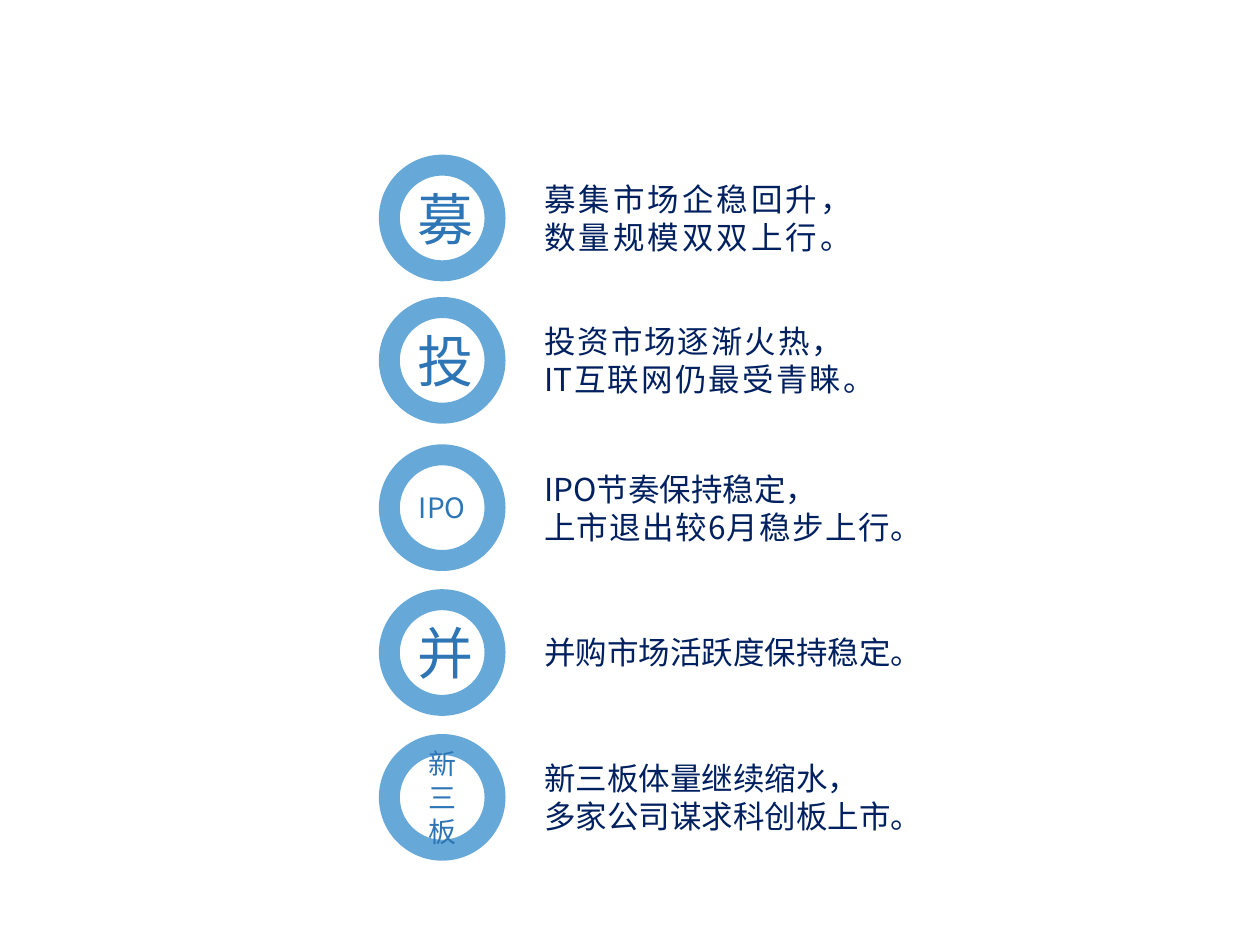
from dataclasses import dataclass

from lxml.etree import SubElement
from pptx import Presentation
from pptx.dml.color import RGBColor
from pptx.enum.lang import MSO_LANGUAGE_ID
from pptx.enum.shapes import MSO_SHAPE
from pptx.enum.text import MSO_ANCHOR, MSO_AUTO_SIZE, PP_ALIGN
from pptx.oxml.ns import qn
from pptx.slide import Slide
from pptx.text.text import TextFrame
from pptx.util import Cm, Pt

CIRCLE_LEFT = 7.85
CIRCLE_SIZE = 2.13
TEXT_LEFT = 10.72
LINE_HEIGHT = 0.76
TEXT_PADDING = 0.26
RING_OPACITY = 60

LABEL_FORMAT = {"name": "Noto Sans CJK JP", "language_id": MSO_LANGUAGE_ID.SIMPLIFIED_CHINESE}
SUMMARY_FORMAT = {
    "name": "Noto Sans CJK SC",
    "size": Pt(18),
    "language_id": MSO_LANGUAGE_ID.SIMPLIFIED_CHINESE,
}


@dataclass
class Topic:
    label: str
    label_size: int
    top: float
    paragraphs: list[str]
    text_width: float
    line_count: int = 2


TOPICS = [
    Topic("募", 32, 3.33, ["募集市场企稳回升，数量规模双双上行。"], 6.07),
    Topic("投", 32, 6.2, ["投资市场逐渐火热，IT互联网仍最受青睐。"], 6.53),
    Topic("IPO", 16, 9.17, ["IPO节奏保持稳定，", "上市退出较6月稳步上行。"], 7.49),
    Topic("并", 32, 12.09, ["并购市场活跃度保持稳定。"], 8.64, 1),
    Topic("新三板", 16, 15.01, ["新三板体量继续缩水，", "多家公司谋求科创板上市。"], 7.49),
]


def color(value: str) -> RGBColor:
    return RGBColor.from_string(value)


def write_text(
    frame: TextFrame, texts: list[str], alignment: PP_ALIGN, formats: dict, font_color: str
) -> None:
    for index, text in enumerate(texts):
        paragraph = frame.paragraphs[0] if index == 0 else frame.add_paragraph()
        paragraph.alignment = alignment
        run = paragraph.add_run()
        run.text = text
        for attribute, value in formats.items():
            setattr(run.font, attribute, value)
        run.font.color.rgb = color(font_color)
        east_asian = SubElement(run.font._element, qn("a:ea"))
        east_asian.set("typeface", formats["name"])
        latin = run.font._element.find(qn("a:latin"))
        latin.addnext(east_asian)


def draw_circle(slide: Slide, topic: Topic) -> None:
    circle = slide.shapes.add_shape(
        MSO_SHAPE.OVAL, Cm(CIRCLE_LEFT), Cm(topic.top), Cm(CIRCLE_SIZE), Cm(CIRCLE_SIZE)
    )
    circle.shadow.inherit = False
    circle.fill.background()
    circle.line.width = Pt(12)
    circle.line.color.rgb = color("0070C0")
    ring_color = circle.line._ln.find(f".//{qn('a:srgbClr')}")
    SubElement(ring_color, qn("a:alpha")).set("val", str(RING_OPACITY * 1000))
    frame = circle.text_frame
    frame.word_wrap = True
    frame.vertical_anchor = MSO_ANCHOR.MIDDLE
    formats = LABEL_FORMAT | {"size": Pt(topic.label_size)}
    write_text(frame, [topic.label], PP_ALIGN.CENTER, formats, "2E75B6")


def draw_summary(slide: Slide, topic: Topic) -> None:
    height = topic.line_count * LINE_HEIGHT + TEXT_PADDING
    top = topic.top + (CIRCLE_SIZE - height) / 2
    box = slide.shapes.add_textbox(Cm(TEXT_LEFT), Cm(top), Cm(topic.text_width), Cm(height))
    frame = box.text_frame
    frame.word_wrap = True
    frame.auto_size = MSO_AUTO_SIZE.SHAPE_TO_FIT_TEXT
    write_text(frame, topic.paragraphs, PP_ALIGN.JUSTIFY, SUMMARY_FORMAT, "002060")


def main() -> None:
    presentation = Presentation()
    presentation.slide_width = Cm(25.4)
    presentation.slide_height = Cm(19.05)
    slide = presentation.slides.add_slide(presentation.slide_layouts.get_by_name("Blank"))
    for topic in TOPICS:
        draw_circle(slide, topic)
        draw_summary(slide, topic)
    presentation.save("out.pptx")


if __name__ == "__main__":
    main()
